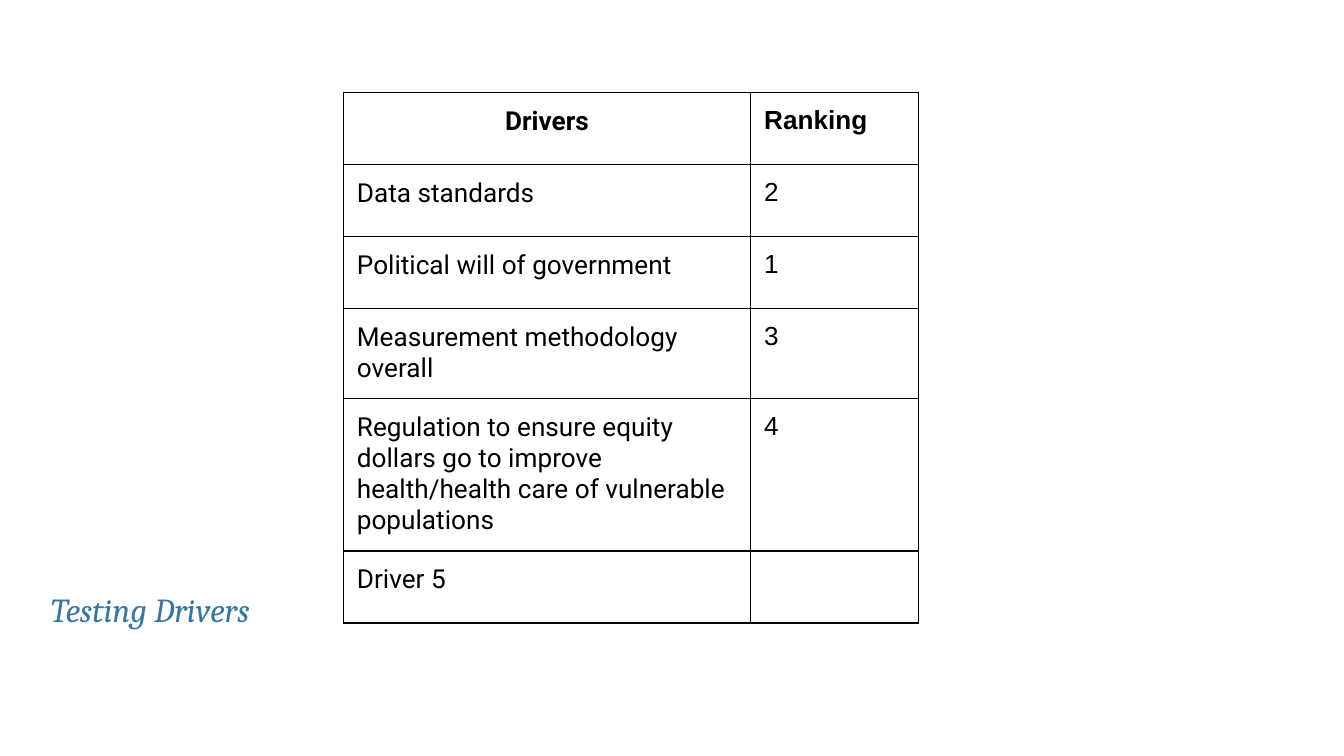
from lxml import etree
from pptx import Presentation
from pptx.dml.color import RGBColor
from pptx.enum.text import MSO_ANCHOR, PP_ALIGN
from pptx.oxml.ns import qn
from pptx.util import Pt

LEFT, CENTER = PP_ALIGN.LEFT, PP_ALIGN.CENTER
MIDDLE = MSO_ANCHOR.MIDDLE

TITLE = "Testing Drivers"
ROWS = [
    ("Drivers", "Ranking"),
    ("Data standards", "2"),
    ("Political will of government", "1"),
    ("Measurement methodology overall", "3"),
    ("Regulation to ensure equity dollars go to improve "
     "health/health care of vulnerable populations", "4"),
    ("Driver 5", ""),
]

THEME = {
    "title_font": "Cambria", "title_size": 18, "title_color": "3576A4",
    "column_fonts": ("Roboto", "Arial"), "table_size": 14,
    "table_color": "000000", "border_width": 0.75,
}
SLIDE_SIZE = (720, 405)
TITLE_BOX = (20.2, 302.4, 472.3, 47.5)
TABLE_LEFT, TABLE_TOP = 184, 49.7
COLUMN_WIDTHS = (218.2, 90)
ROW_HEIGHT = 38.6
INSET = 7.2


def set_margins(target):
    target.margin_left = target.margin_right = Pt(INSET)
    target.margin_top = target.margin_bottom = Pt(INSET)


def style_font(font, name, size, color, bold=False, italic=False):
    font.name, font.size = name, Pt(size)
    font.bold, font.italic = bold, italic
    font.color.rgb = RGBColor.from_string(color)


def add_borders(cell):
    properties = cell._tc.get_or_add_tcPr()
    for side in ("a:lnL", "a:lnR", "a:lnT", "a:lnB"):
        line = etree.SubElement(properties, qn(side), w=str(Pt(THEME["border_width"])))
        fill = etree.SubElement(line, qn("a:solidFill"))
        etree.SubElement(fill, qn("a:srgbClr"), val=THEME["table_color"])


def add_title(slide):
    frame = slide.shapes.add_textbox(*map(Pt, TITLE_BOX)).text_frame
    frame.word_wrap = True
    frame.vertical_anchor = MIDDLE
    set_margins(frame)
    paragraph = frame.paragraphs[0]
    paragraph.text = TITLE
    style_font(paragraph.font, THEME["title_font"], THEME["title_size"],
               THEME["title_color"], italic=True)


def add_ranking_table(slide):
    table = slide.shapes.add_table(
        len(ROWS), len(COLUMN_WIDTHS), Pt(TABLE_LEFT), Pt(TABLE_TOP),
        Pt(sum(COLUMN_WIDTHS)), Pt(ROW_HEIGHT * len(ROWS))).table
    table.first_row = table.horz_banding = False
    for column, width in zip(table.columns, COLUMN_WIDTHS):
        column.width = Pt(width)
    for row_index, texts in enumerate(ROWS):
        table.rows[row_index].height = Pt(ROW_HEIGHT)
        is_header = row_index == 0
        for column_index, text in enumerate(texts):
            cell = table.cell(row_index, column_index)
            set_margins(cell)
            add_borders(cell)
            cell.fill.background()
            paragraph = cell.text_frame.paragraphs[0]
            paragraph.text = text
            paragraph.alignment = CENTER if is_header and column_index == 0 else LEFT
            style_font(paragraph.font, THEME["column_fonts"][column_index],
                       THEME["table_size"], THEME["table_color"], bold=is_header)


def main():
    presentation = Presentation()
    presentation.slide_width, presentation.slide_height = map(Pt, SLIDE_SIZE)
    slide = presentation.slides.add_slide(presentation.slide_layouts[6])
    add_title(slide)
    add_ranking_table(slide)
    presentation.save("out.pptx")


if __name__ == "__main__":
    main()
